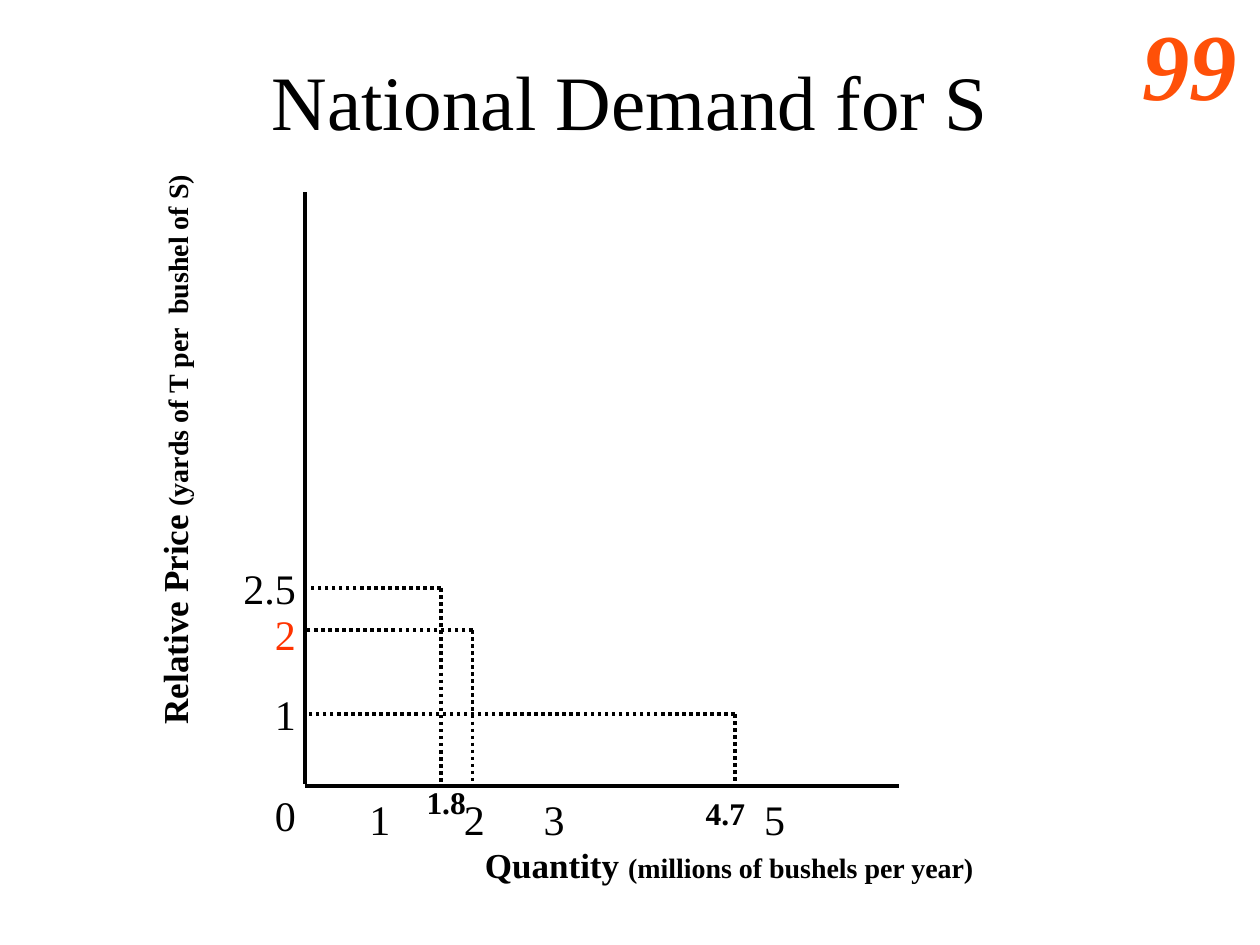
"""Builds the slide on national demand for S with price and quantity guides."""
from lxml import etree
from pptx import Presentation
from pptx.dml.color import RGBColor
from pptx.enum import dml, shapes, text
from pptx.oxml import ns
from pptx.util import Pt

BLACK, RED, ORANGE = "000000", "FF3300", "FF5008"
LEFT, CENTER, RIGHT = text.PP_ALIGN.LEFT, text.PP_ALIGN.CENTER, text.PP_ALIGN.RIGHT
AXIS_X, AXIS_Y = 174.2, 449.2


def rgb(value):
    return RGBColor.from_string(value)


class DemandSlide:
    face = "Times New Roman"
    weight = 2

    def __init__(self, prs):
        self.s = prs.slides.add_slide(prs.slide_layouts[5])

    def style(self, p, size, color=BLACK, bold=False, italic=False, align=LEFT):
        p.alignment = align
        f = p.font
        f.name, f.size, f.bold, f.italic = self.face, Pt(size), bold, italic
        f.color.rgb = rgb(color)

    def title(self, words, x, y, w, h):
        sp = self.s.shapes.title
        sp.left, sp.top, sp.width, sp.height = Pt(x), Pt(y), Pt(w), Pt(h)
        tf = sp.text_frame
        tf.text = words
        tf.vertical_anchor = text.MSO_ANCHOR.MIDDLE
        self.style(tf.paragraphs[0], 44, align=CENTER)

    def label(self, words, x, y, w, h, size=24, wrap=False, middle=False, **look):
        sp = self.s.shapes.add_textbox(Pt(x), Pt(y), Pt(w), Pt(h))
        tf = sp.text_frame
        tf.word_wrap = wrap
        tf.auto_size = text.MSO_AUTO_SIZE.SHAPE_TO_FIT_TEXT
        if middle:
            tf.vertical_anchor = text.MSO_ANCHOR.MIDDLE
        p = tf.paragraphs[0]
        p.text = words
        self.style(p, size, **look)
        return sp

    def axis_title(self, name, unit, x, y, w, h, rotation=0):
        sp = self.label(name, x, y, w, h, size=20, bold=True)
        sp.rotation = rotation
        r = sp.text_frame.paragraphs[0].add_run()
        r.text = unit
        r.font.size = Pt(16)

    def line(self, x1, y1, x2, y2, dotted=False):
        c = self.s.shapes.add_connector(
            shapes.MSO_CONNECTOR.STRAIGHT, Pt(x1), Pt(y1), Pt(x2), Pt(y2))
        c.line.color.rgb = rgb(BLACK)
        c.line.width = Pt(self.weight)
        if dotted:
            c.line.dash_style = dml.MSO_LINE.ROUND_DOT
        etree.SubElement(c._element.spPr, ns.qn("a:effectLst"))

    def guide(self, x, y):
        self.line(x, y, AXIS_X, y, dotted=True)
        self.line(x, y, x, 450, dotted=True)


def main():
    prs = Presentation()
    prs.slide_width, prs.slide_height = Pt(720), Pt(540)
    d = DemandSlide(prs)

    d.label("99", 618, 0, 96, 72, size=54, wrap=True,
            color=ORANGE, bold=True, italic=True, align=RIGHT)
    d.title("National Demand for S", 54, 12, 612, 90)

    d.line(AXIS_X, 110, AXIS_X, 448)
    d.line(AXIS_X, AXIS_Y, 514, AXIS_Y)
    for x, y in ((252, 336), (270, 360), (420, 408)):
        d.guide(x, y)

    for words, x, y, w, color in (("2.5", 132, 318, 48, BLACK),
                                  ("2", 150, 344, 27, RED),
                                  ("1", 150, 390, 27, BLACK),
                                  ("0", 150, 447.5, 27, BLACK)):
        d.label(words, x, y, w, 36, color=color)
    for words, x in (("1", 204), ("2", 258), ("3", 303.5), ("5", 429.5)):
        d.label(words, x, 450, 27, 36)
    for words, x, y, w, wrap in (("4.7", 395.5, 450, 38, False),
                                 ("1.8", 234, 444, 42, True)):
        d.label(words, x, y, w, 29, size=18, wrap=wrap, middle=True,
                bold=True, align=CENTER)

    d.axis_title("Quantity ", "(millions of bushels per year)", 270, 478.5, 295, 31)
    d.axis_title("Relative Price ", "(yards of T per  bushel of S)",
                 -65, 241, 329, 31, rotation=270)
    prs.save("out.pptx")


if __name__ == "__main__":
    main()
